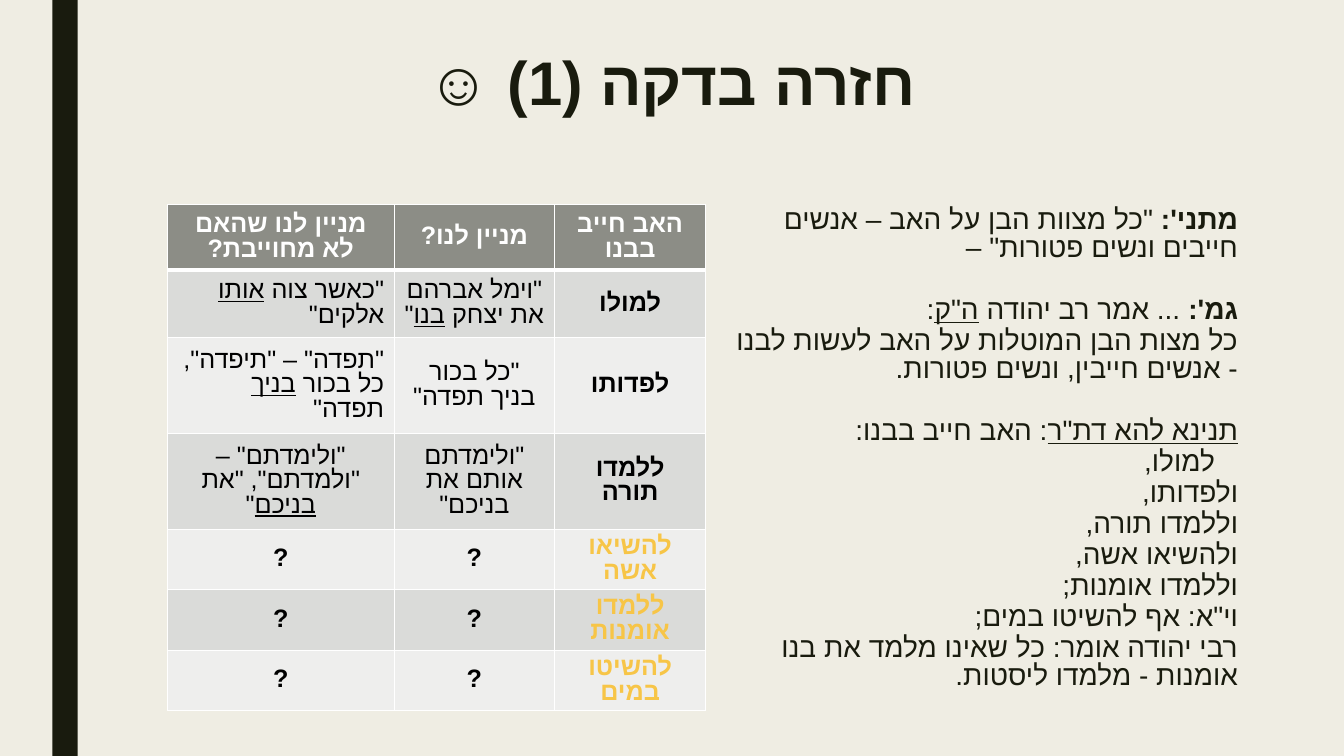
from pptx import Presentation
from pptx.dml.color import RGBColor
from pptx.enum import shapes, text
from pptx.oxml import parse_xml
from pptx.oxml.ns import nsdecls
from pptx.util import Inches, Pt

CREAM = RGBColor(0xEF, 0xED, 0xE3)
INK = RGBColor(0x19, 0x1B, 0x0E)
WHITE = RGBColor(0xFF, 0xFF, 0xFF)
BLACK = RGBColor(0, 0, 0)
GOLD = RGBColor(0xF7, 0xC5, 0x47)
HEADER_GRAY = RGBColor(0x8C, 0x8D, 0x86)
BANDS = [RGBColor(0xDA, 0xDB, 0xD9), RGBColor(0xEE, 0xEE, 0xED)]
HEBREW_FONT = "Arial"
RIGHT, CENTER = text.PP_ALIGN.RIGHT, text.PP_ALIGN.CENTER


def write_rtl(paragraph, content, font_name, size, color, bold=False, align=CENTER):
    """Fill a right-to-left paragraph; *...* marks bold and _..._ underline."""
    paragraph.alignment = align
    properties = paragraph._p.get_or_add_pPr()
    properties.set("rtl", "1")
    font = paragraph.font
    font.name, font.size, font.bold = font_name, Pt(size), bold
    font.color.rgb = color
    for mark_bold, bold_part in enumerate(content.split("*")):
        for mark_line, part in enumerate(bold_part.split("_")):
            if part:
                run = paragraph.add_run()
                run.text = part
                if mark_bold % 2:
                    run.font.bold = True
                if mark_line % 2:
                    run.font.underline = True
                run._r.get_or_add_rPr().append(
                    parse_xml(f'<a:cs {nsdecls("a")} typeface="{HEBREW_FONT}"/>'))


def add_border(cell, side, points):
    cell._tc.get_or_add_tcPr().append(parse_xml(
        f'<a:{side} {nsdecls("a")} w="{Pt(points)}"><a:solidFill>'
        f'<a:srgbClr val="{WHITE}"/></a:solidFill></a:{side}>'))


presentation = Presentation()
presentation.slide_width, presentation.slide_height = Inches(13.33), Inches(7.5)
slide = presentation.slides.add_slide(presentation.slide_layouts[1])
slide.background.fill.solid()
slide.background.fill.fore_color.rgb = CREAM

stripe = slide.shapes.add_shape(
    shapes.MSO_SHAPE.RECTANGLE, Inches(0.52), 0, Inches(0.25), Inches(7.5))
stripe.shadow.inherit = False
stripe.fill.solid()
stripe.fill.fore_color.rgb = INK
stripe.line.fill.background()

title, body = slide.placeholders
places = [(title, 1.33, 0.47, 10.66, 0.94), (body, 7.16, 2, 5.22, 5.17)]
for placeholder, left, top, width, height in places:
    placeholder.left, placeholder.top = Inches(left), Inches(top)
    placeholder.width, placeholder.height = Inches(width), Inches(height)
    frame = placeholder.text_frame
    frame.word_wrap = True
    frame.auto_size = text.MSO_AUTO_SIZE.NONE
    frame.vertical_anchor = text.MSO_ANCHOR.TOP

heading = title.text_frame.paragraphs[0]
heading.line_spacing = 0.89
write_rtl(heading, "חזרה בדקה (1) ☺", "Roboto", 44, INK, bold=True)

# Each line: text, space before in points, indent in inches
body_lines = [
    ("*מתני': *\"כל מצוות הבן על האב – אנשים חייבים ונשים פטורות\" –", 0, 0),
    ("*גמ': *... אמר רב יהודה _ה\"ק_:", 22, 0),
    ("כל מצות הבן המוטלות על האב לעשות לבנו - אנשים חייבין, ונשים פטורות.", 0, 0),
    ("_תנינא להא דת\"ר_: האב חייב בבנו:", 22, 0),
    ("למולו,", 0, 0.23),
    ("ולפדותו,", 0, 0),
    ("וללמדו תורה,", 0, 0),
    ("ולהשיאו אשה,", 0, 0),
    ("וללמדו אומנות;", 0, 0),
    ("וי\"א: אף להשיטו במים;", 0, 0),
    ("רבי יהודה אומר: כל שאינו מלמד את בנו אומנות - מלמדו ליסטות.", 0, 0),
]
for index, (line, space_before, indent) in enumerate(body_lines):
    frame = body.text_frame
    paragraph = frame.add_paragraph() if index else frame.paragraphs[0]
    paragraph.line_spacing = 0.84
    paragraph.space_before, paragraph.space_after = Pt(space_before), Pt(2)
    properties = paragraph._p.get_or_add_pPr()
    properties.set("marL", str(Inches(indent)))
    properties.set("indent", "0")
    properties.append(parse_xml(f'<a:buNone {nsdecls("a")}/>'))
    write_rtl(paragraph, line, "Roboto", 20, INK, align=RIGHT)

rows = [
    ("מניין לנו שהאם לא מחוייבת?", "מניין לנו?", "האב חייב בבנו"),
    ("\"כאשר צוה _אותו_ אלקים\"", "\"וימל אברהם את יצחק _בנו_\"", "למולו"),
    ("\"תפדה\" – \"תיפדה\", כל בכור _בניך_ תפדה\"", "\"כל בכור בניך תפדה\"", "לפדותו"),
    ("\"ולימדתם\" – \"ולמדתם\", \"את _בניכם_\"", "\"ולימדתם אותם את בניכם\"", "ללמדו תורה"),
    ("?", "?", "להשיאו אשה"),
    ("?", "?", "ללמדו אומנות"),
    ("?", "?", "להשיטו במים"),
]
table = slide.shapes.add_table(
    len(rows), 3, Inches(1.66), Inches(2.03), Inches(5.34), Inches(5.02)).table
for column, width in zip(table.columns, [2.25, 1.59, 1.5]):
    column.width = Inches(width)
for row, height in zip(table.rows, [0.65, 0.67, 0.95, 0.95, 0.6, 0.6, 0.6]):
    row.height = Inches(height)

for r, row in enumerate(rows):
    for c, content in enumerate(row):
        cell = table.cell(r, c)
        cell.vertical_anchor = text.MSO_ANCHOR.MIDDLE
        for side in ("lnL", "lnR", "lnT", "lnB"):
            thick = (r, side) in [(0, "lnB"), (1, "lnT")]
            add_border(cell, side, 3 if thick else 1)
        cell.fill.solid()
        cell.fill.fore_color.rgb = BANDS[(r - 1) % 2] if r else HEADER_GRAY
        color = WHITE if r == 0 else GOLD if r > 3 and c == 2 else BLACK
        paragraph = cell.text_frame.paragraphs[0]
        paragraph.line_spacing = 0.87
        write_rtl(paragraph, content, "Karla", 18, color,
                  bold=r in (0, 4, 5, 6) or c == 2,
                  align=RIGHT if c == 0 and r in (1, 2) else CENTER)

presentation.save("out.pptx")
